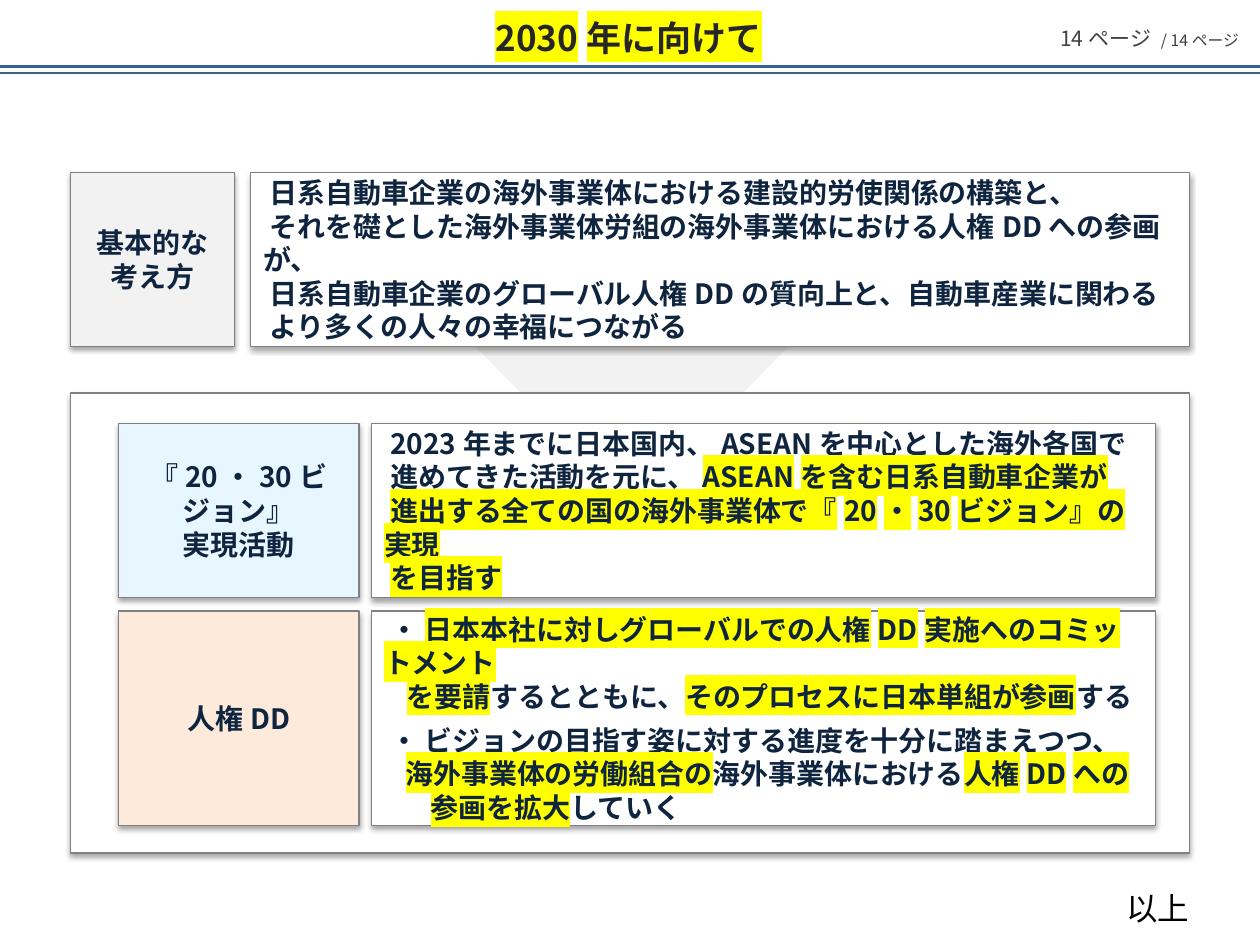
"""Build the closing slide on the direction towards 2030."""
from lxml import etree
from pptx import Presentation
from pptx.dml.color import RGBColor
from pptx.enum import shapes, text
from pptx.oxml import ns
from pptx.util import Inches, Pt

FONT = "Noto Sans CJK JP"
NAVY, GREY, WHITE, YELLOW = "0F243E", "808080", "FFFFFF", "FFFF00"
LEFT, CENTER, RIGHT = text.PP_ALIGN.LEFT, text.PP_ALIGN.CENTER, text.PP_ALIGN.RIGHT
TOP, MIDDLE = text.MSO_ANCHOR.TOP, text.MSO_ANCHOR.MIDDLE


def add_child(parent, tag, **attributes):
    """Append a DrawingML element."""
    values = {key: str(value) for key, value in attributes.items()}
    return etree.SubElement(parent, ns.qn(f"a:{tag}"), values)


def write(shape, lines, size=16, color=NAVY, bold=True, align=LEFT, anchor=MIDDLE, latin=FONT):
    """Write (text, first-line indent, space before) lines; parts between bars are highlighted."""
    frame = shape.text_frame
    frame.word_wrap = True
    frame.vertical_anchor = anchor
    for index, (line, indent, before) in enumerate(lines):
        paragraph = frame.paragraphs[0] if index == 0 else frame.add_paragraph()
        paragraph.alignment = align
        paragraph.space_before = Pt(before)
        properties = paragraph._p.get_or_add_pPr()
        properties.set("marL", "0")
        properties.set("indent", str(Inches(indent)))
        for part_index, part in enumerate(line.split("|")):
            if not part:
                continue
            run = paragraph.add_run()
            run.text = part
            run.font.size = Pt(size)
            run.font.bold = bold
            run.font.color.rgb = RGBColor.from_string(color)
            run_properties = run._r.get_or_add_rPr()
            if part_index % 2:
                highlight = add_child(run_properties, "highlight")
                add_child(highlight, "srgbClr", val=YELLOW)
            run.font.name = latin
            add_child(run_properties, "ea", typeface=FONT)


presentation = Presentation()
presentation.slide_width, presentation.slide_height = Inches(10), Inches(7.5)
slide = presentation.slides.add_slide(presentation.slide_layouts[5])

arrow = slide.shapes.add_shape(
    shapes.MSO_SHAPE.ISOSCELES_TRIANGLE, Inches(3.49), Inches(2.46), Inches(3.05), Inches(1.56))
arrow.rotation = 180
arrow.shadow.inherit = False
arrow.fill.solid()
arrow.fill.fore_color.rgb = RGBColor.from_string("F2F2F2")
arrow.line.fill.background()

idea = ["日系自動車企業の海外事業体における建設的労使関係の構築と、",
        "それを礎とした海外事業体労組の海外事業体における人権DDへの参画が、",
        "日系自動車企業のグローバル人権DDの質向上と、自動車産業に関わる",
        "より多くの人々の幸福につながる"]
vision = ["2023年までに日本国内、ASEANを中心とした海外各国で",
          "進めてきた活動を元に、|ASEANを含む日系自動車企業が|",
          "|進出する全ての国の海外事業体で『20・30ビジョン』の実現|",
          "|を目指す|"]
rights = [("・ |日本本社に対しグローバルでの人権DD実施へのコミットメント|", 0.05, 0),
          ("|を要請|するとともに、|そのプロセスに日本単組が参画|する", 0.18, 0),
          ("・ ビジョンの目指す姿に対する進度を十分に踏まえつつ、", 0.05, 6),
          ("|海外事業体の労働組合の|海外事業体における|人権DDへの|", 0.17, 0),
          ("|参画を拡大|していく", 0.37, 0)]
boxes = [
    (0.56, 3.12, 8.88, 3.65, WHITE, LEFT, []),
    (0.56, 1.37, 1.3, 1.38, "F2F2F2", CENTER, [("基本的な", 0, 0), ("考え方", 0, 0)]),
    (1.99, 1.37, 7.45, 1.38, WHITE, LEFT, [(line, 0.05, 0) for line in idea]),
    (0.94, 3.36, 1.91, 1.38, "E7F6FF", CENTER,
     [("『20・30ビジョン』", 0, 0), ("実現活動", 0, 0)]),
    (2.95, 3.36, 6.22, 1.38, WHITE, LEFT, [(line, 0.05, 0) for line in vision]),
    (0.94, 4.85, 1.91, 1.7, "FDEADA", CENTER, [("人権DD", 0, 0)]),
    (2.95, 4.85, 6.22, 1.7, WHITE, LEFT, rights),
]
for left, top, width, height, fill, align, lines in boxes:
    box = slide.shapes.add_shape(
        shapes.MSO_SHAPE.RECTANGLE, Inches(left), Inches(top), Inches(width), Inches(height))
    box.fill.solid()
    box.fill.fore_color.rgb = RGBColor.from_string(fill)
    box.line.color.rgb = RGBColor.from_string(GREY)
    box.line.width = Pt(0.75)
    box.shadow.inherit = False
    effects = box.element.spPr.find(ns.qn("a:effectLst"))
    shadow = add_child(effects, "outerShdw", blurRad=Pt(3.1), dist=Pt(1.8),
                       dir=5400000, rotWithShape=0)
    add_child(add_child(shadow, "srgbClr", val="000000"), "alpha", val=35000)
    write(box, lines, align=align)

band = slide.shapes.add_shape(
    shapes.MSO_SHAPE.RECTANGLE, Inches(0), Inches(0), Inches(10.02), Inches(0.53))
band.shadow.inherit = False
band.fill.solid()
band.fill.fore_color.rgb = RGBColor.from_string(WHITE)
band.line.color.rgb = RGBColor.from_string(WHITE)
band.line.width = Pt(2)

for top, weight in [(0.53, 1.5), (0.58, 0.75)]:
    rule = slide.shapes.add_connector(
        shapes.MSO_CONNECTOR.STRAIGHT, Inches(-0.02), Inches(top), Inches(10), Inches(top))
    rule.line.color.rgb = RGBColor.from_string("376092")
    rule.line.width = Pt(weight)
    add_child(rule.element.spPr, "effectLst")

title = slide.shapes.title
title.left, title.top, title.width, title.height = (
    Inches(-0.02), Inches(0.08), Inches(10.02), Inches(0.44))
write(title, [("|2030年に向けて|", 0, 0)], 20, "262626", align=CENTER, anchor=TOP)
rule.element.addnext(title.element)

page = slide.shapes.add_textbox(Inches(8), Inches(0.15), Inches(1.93), Inches(0.3))
write(page, [("14ページ ||/ 14ページ", 0, 0)], 12, "404040", False, RIGHT, TOP)
page.text_frame.paragraphs[0].runs[1].font.size = Pt(9)

closing = slide.shapes.add_textbox(Inches(8.55), Inches(6.98), Inches(1.28), Inches(0.46))
write(closing, [("以上", 0, 0)], 18, "000000", False, CENTER, latin="Calibri")

presentation.save("out.pptx")
